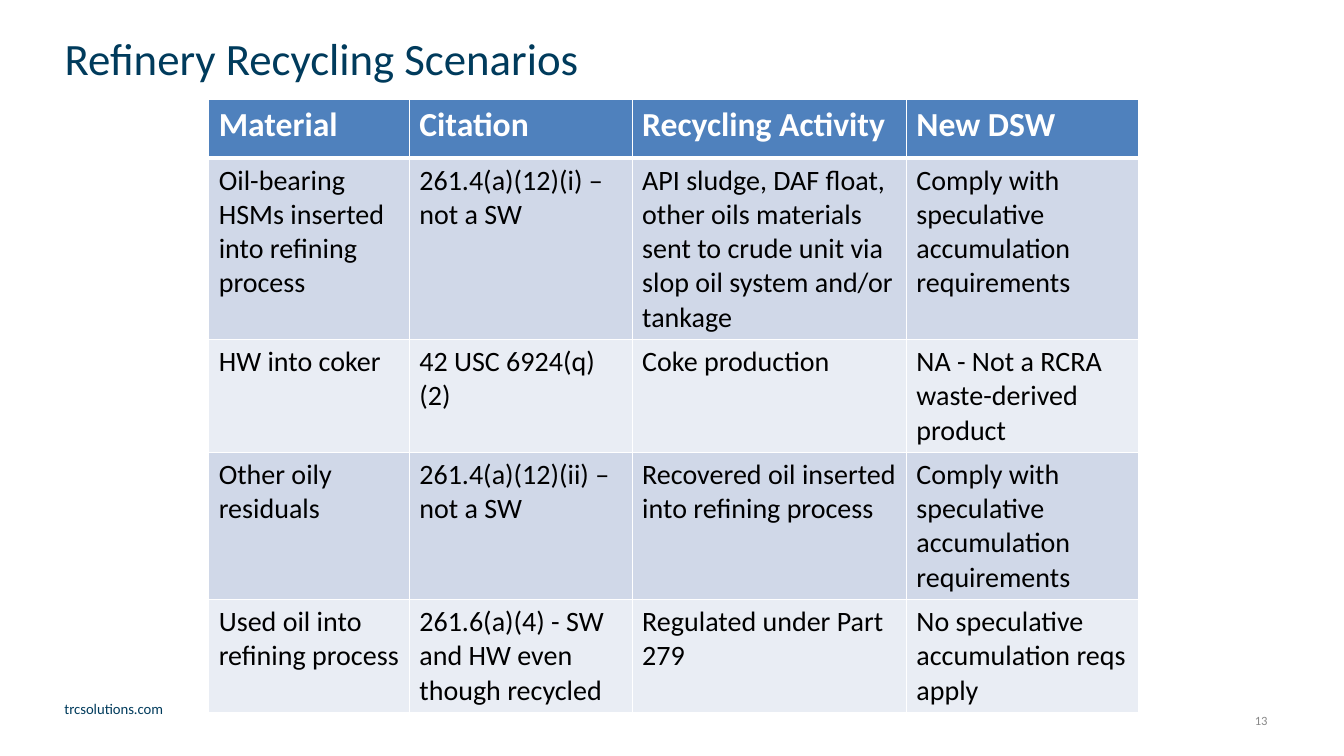
import pptx
import pptx.dml.color
import pptx.enum.text
import pptx.oxml
import pptx.oxml.ns
import pptx.util
from pptx.util import Inches

RGB = pptx.dml.color.RGBColor
ALIGN = pptx.enum.text.PP_ALIGN
ANCHOR = pptx.enum.text.MSO_ANCHOR

NAVY = RGB(0x00, 0x3B, 0x5C)
GRAY = RGB(0x89, 0x89, 0x89)
WHITE = RGB(0xFF, 0xFF, 0xFF)
BLACK = RGB(0x00, 0x00, 0x00)
BLUE = RGB(0x4F, 0x81, 0xBD)
BANDS = [RGB(0xD0, 0xD8, 0xE8), RGB(0xE9, 0xED, 0xF4)]

COLS = [1.99, 2.21, 2.72, 2.3]
ROWS = [0.58, 1.8, 1.12, 1.46, 1.12]
CELLS = [
    ["Material", "Citation", "Recycling Activity", "New DSW"],
    ["Oil-bearing HSMs inserted into refining process",
     "261.4(a)(12)(i) – not a SW",
     "API sludge, DAF float, other oils materials sent to crude unit "
     "via slop oil system and/or tankage",
     "Comply with speculative accumulation requirements"],
    ["HW into coker", "42 USC 6924(q)(2)", "Coke production",
     "NA - Not a RCRA waste-derived product"],
    ["Other oily residuals", "261.4(a)(12)(ii) – not a SW",
     "Recovered oil inserted into refining process",
     "Comply with speculative accumulation requirements"],
    ["Used oil into refining process",
     "261.6(a)(4) - SW and HW even though recycled",
     "Regulated under Part 279",
     "No speculative accumulation reqs apply"],
]


def write(frame, text, size, color, bold=False, align=ALIGN.LEFT):
    para = frame.paragraphs[0]
    para.alignment = align
    run = para.add_run()
    run.text = text
    run.font.name = "Calibri"
    run.font.size = pptx.util.Pt(size)
    run.font.bold = bold
    run.font.color.rgb = color


def add_label(slide, box, text, anchor=ANCHOR.TOP, **style):
    frame = slide.shapes.add_textbox(*map(Inches, box)).text_frame
    frame.word_wrap = True
    frame.vertical_anchor = anchor
    write(frame, text, **style)


def add_title(slide, box, text, **style):
    title = slide.shapes.title
    title.left, title.top, title.width, title.height = map(Inches, box)
    title.text_frame.vertical_anchor = ANCHOR.TOP
    write(title.text_frame, text, **style)


def set_border(cell, side, points):
    width = pptx.util.Pt(points)
    line = pptx.oxml.parse_xml(
        f'<a:ln{side} {pptx.oxml.ns.nsdecls("a")} w="{width}">'
        f'<a:solidFill><a:srgbClr val="{WHITE}"/></a:solidFill></a:ln{side}>')
    cell._tc.get_or_add_tcPr().append(line)


def fill_cell(cell, text, row):
    head = row == 0
    edges = {"L": 1, "R": 1, "T": 3 if row == 1 else 1, "B": 3 if head else 1}
    for side, points in edges.items():
        set_border(cell, side, points)
    cell.fill.solid()
    cell.fill.fore_color.rgb = BLUE if head else BANDS[(row - 1) % 2]
    write(cell.text_frame, text, size=24 if head else 20,
          color=WHITE if head else BLACK, bold=head)


def add_grid(slide, left, top):
    table = slide.shapes.add_table(
        len(ROWS), len(COLS), Inches(left), Inches(top),
        Inches(sum(COLS)), Inches(sum(ROWS))).table
    for col, width in zip(table.columns, COLS):
        col.width = Inches(width)
    for row, height in enumerate(ROWS):
        table.rows[row].height = Inches(height)
        for col, text in enumerate(CELLS[row]):
            fill_cell(table.cell(row, col), text, row)


def main():
    deck = pptx.Presentation()
    deck.slide_width = Inches(13.33)
    deck.slide_height = Inches(7.5)
    slide = deck.slides.add_slide(deck.slide_layouts.get_by_name("Title Only"))
    add_label(slide, (0.54, 6.89, 2.21, 0.28), "trcsolutions.com",
              size=10.5, color=NAVY)
    add_label(slide, (9.56, 6.95, 3.11, 0.4), "13", anchor=ANCHOR.MIDDLE,
              size=9, color=GRAY, align=ALIGN.RIGHT)
    add_title(slide, (0.54, 0.25, 10.38, 0.74), "Refinery Recycling Scenarios",
              size=32, color=NAVY)
    add_grid(slide, 2.07, 0.99)
    deck.save("out.pptx")


if __name__ == "__main__":
    main()
